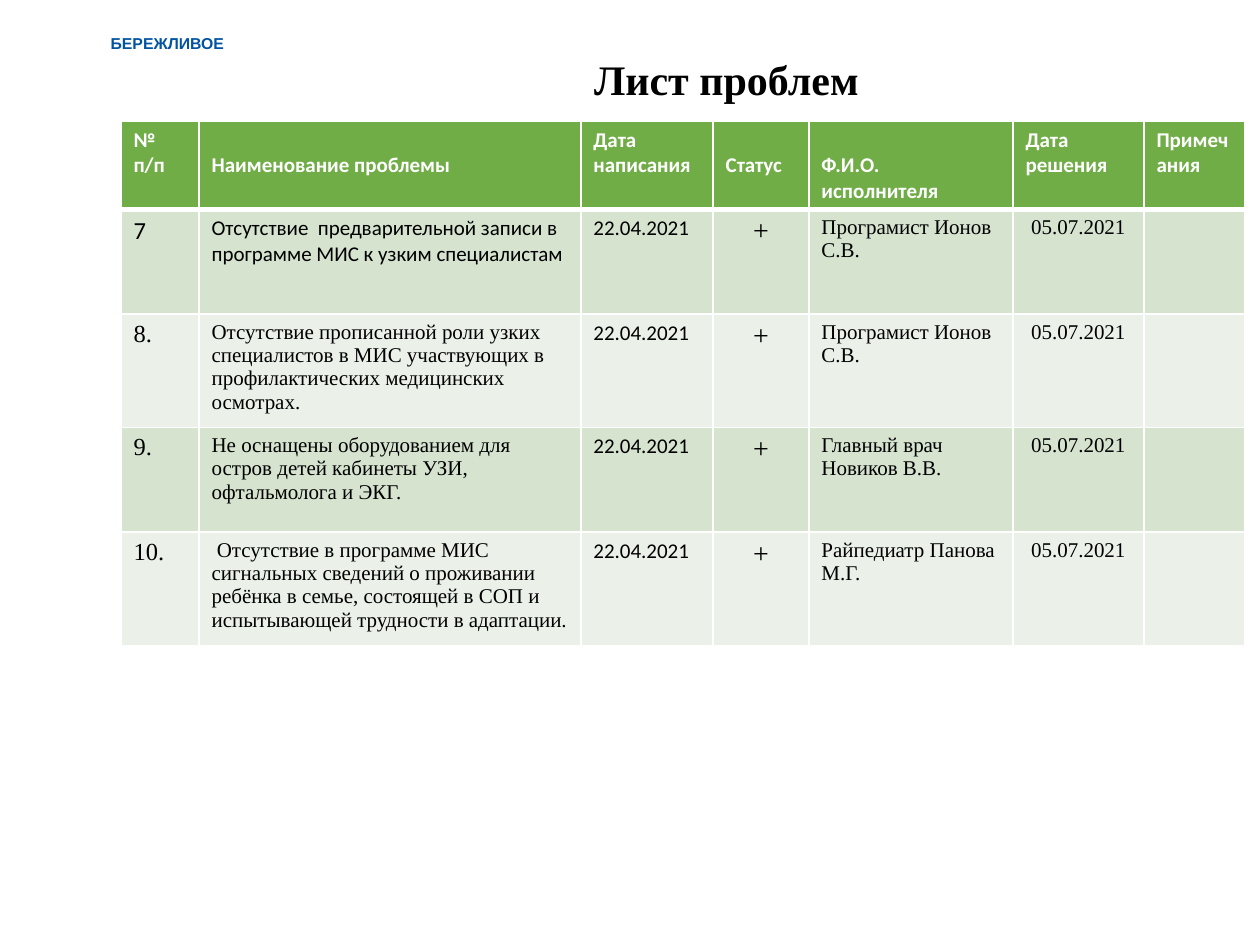
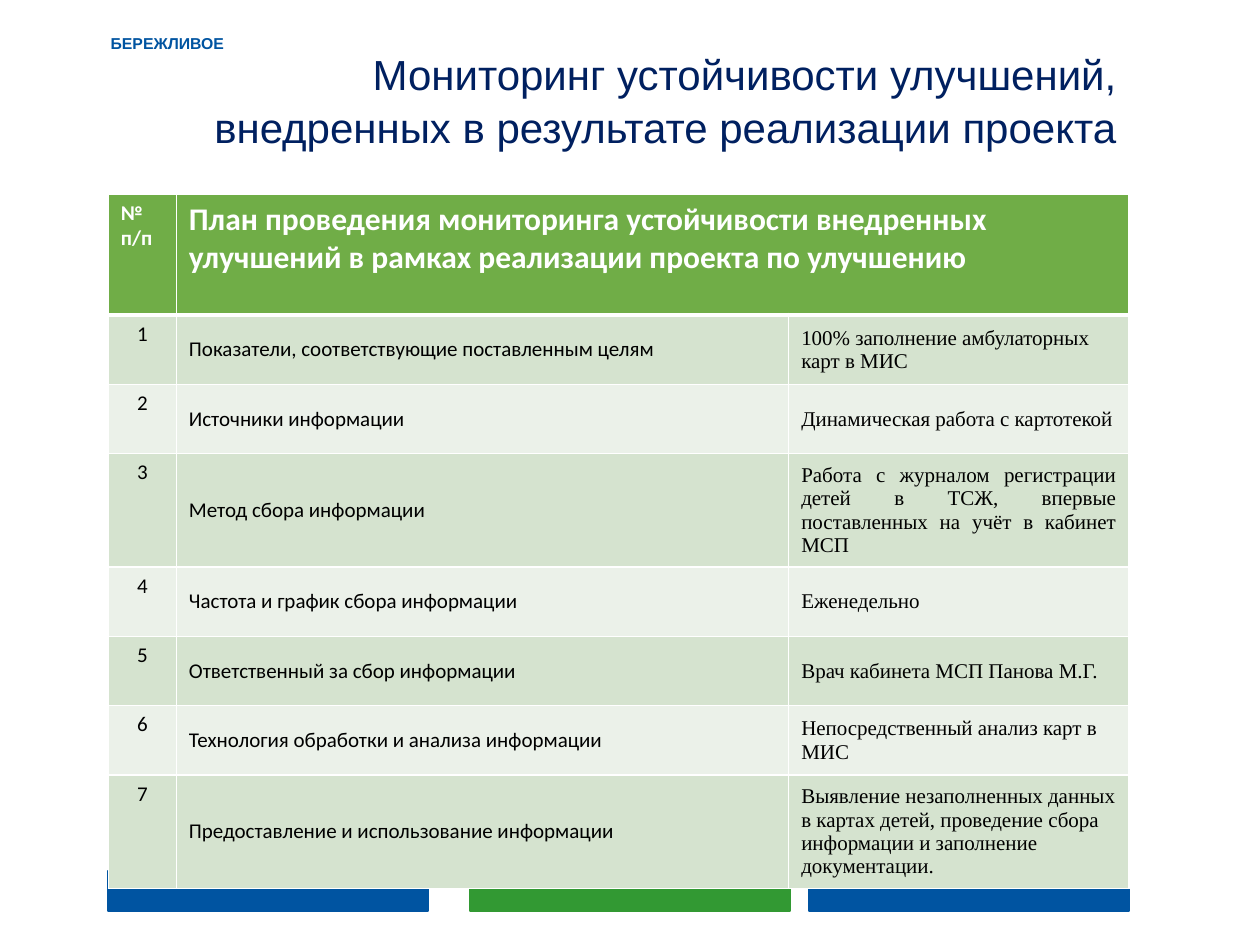
"""Build the problem list and improvement monitoring slides."""
from lxml.etree import SubElement
from pptx import Presentation
from pptx.dml.color import RGBColor
from pptx.enum.shapes import MSO_SHAPE
from pptx.enum.text import MSO_ANCHOR, PP_ALIGN
from pptx.oxml.ns import qn
from pptx.util import Pt

SERIF, SANS, BODY = "Times New Roman", "Arial", "Calibri"
BLUE, GREEN, NAVY, BLACK, WHITE = "0054A1", "329933", "002060", "000000", "FFFFFF"
HEADER, BANDS = "70AD47", ("D5E3CF", "EBF1E9")
LEFT, CENTER, RIGHT, JUSTIFY = PP_ALIGN.LEFT, PP_ALIGN.CENTER, PP_ALIGN.RIGHT, PP_ALIGN.JUSTIFY
TOP, MIDDLE = MSO_ANCHOR.TOP, MSO_ANCHOR.MIDDLE


def rgb(value):
    return RGBColor.from_string(value)


def write(tf, text, font, size, color, align=LEFT, bold=False):
    tf.text = text
    for p in tf.paragraphs:
        p.alignment = align
        for r in p.runs:
            r.font.name, r.font.size, r.font.bold = font, Pt(size), bold
            r.font.color.rgb = rgb(color)


prs = Presentation()
prs.slide_width, prs.slide_height = 9144000, 6858000
U = prs.slide_width / 100

problems = [
    ["№\nп/п", "Наименование проблемы", "Дата\nнаписания", "Статус",
     "Ф.И.О.\nисполнителя", "Дата\nрешения", "Примечания"],
    ["7", "Отсутствие  предварительной записи в программе МИС к узким специалистам",
     "22.04.2021", "+", "Програмист Ионов С.В.", "05.07.2021", ""],
    ["8.", "Отсутствие прописанной роли узких специалистов в МИС участвующих в "
     "профилактических медицинских осмотрах.",
     "22.04.2021", "+", "Програмист Ионов С.В.", "05.07.2021", ""],
    ["9.", "Не оснащены оборудованием для остров детей кабинеты УЗИ, офтальмолога и ЭКГ.",
     "22.04.2021", "+", "Главный врач Новиков В.В.", "05.07.2021", ""],
    ["10.", " Отсутствие в программе МИС сигнальных сведений о проживании ребёнка в семье, "
     "состоящей в СОП и испытывающей трудности в адаптации.",
     "22.04.2021", "+", "Райпедиатр Панова М.Г.", "05.07.2021", ""],
]
monitoring = [
    ["№ п/п", "План проведения мониторинга устойчивости внедренных улучшений "
     "в рамках реализации проекта по улучшению", ""],
    ["1", "Показатели, соответствующие поставленным целям",
     "100% заполнение амбулаторных карт в МИС"],
    ["2", "Источники информации", "Динамическая работа с картотекой"],
    ["3", "Метод сбора информации",
     "Работа с журналом регистрации детей в ТСЖ, впервые поставленных на учёт в кабинет МСП"],
    ["4", "Частота и график сбора информации", "Еженедельно"],
    ["5", "Ответственный за сбор информации", "Врач кабинета МСП Панова М.Г."],
    ["6", "Технология обработки и анализа информации", "Непосредственный анализ карт в МИС"],
    ["7", "Предоставление и использование информации",
     "Выявление незаполненных данных в картах детей, проведение сбора информации "
     "и заполнение документации."],
]
slides = [
    dict(title=("Лист проблем", SERIF, 24, BLACK, CENTER, True), title_box=(25.2, 3.5, 64.9, 15.2),
         bars=[], rows=problems, corner=(9.6, 9.6),
         widths=[6.2, 30.3, 10.5, 7.6, 16.2, 10.4, 8], heights=[6.9, 8.3, 9, 8.3, 9],
         columns=[(SERIF, 14, LEFT, TOP), (SERIF, 12, LEFT, TOP), (BODY, 12, LEFT, TOP),
                  (SERIF, 16, CENTER, TOP), (SERIF, 12, LEFT, TOP), (SERIF, 12, CENTER, TOP),
                  (SERIF, 12, LEFT, TOP)],
         header_sizes=[12] * 7, lowered=(1, 3, 4), plain=[(1, 0), (1, 1)], justified=[]),
    dict(title=("Мониторинг устойчивости улучшений, внедренных в результате реализации проекта",
                SANS, 24, NAVY, RIGHT, False), title_box=(12, 3.1, 77.6, 14.6),
         bars=[(64.2, BLUE), (8.6, BLUE), (37.3, GREEN)], rows=monitoring, corner=(8.6, 15.4),
         widths=[5.4, 48.6, 27], heights=[9.6, 5.5, 5.5, 9, 5.5, 5.5, 5.5, 9],
         columns=[(BODY, 12, CENTER, TOP), (BODY, 12, LEFT, MIDDLE), (SERIF, 12, LEFT, MIDDLE)],
         header_sizes=[12, 18, 18], lowered=(), plain=[], justified=[(3, 2)]),
]

for page in slides:
    s = prs.slides.add_slide(prs.slide_layouts[6])
    tf = s.shapes.add_textbox(*(round(v * U) for v in page["title_box"])).text_frame
    tf.word_wrap = True
    write(tf, *page["title"])
    tf.paragraphs[0].line_spacing = 1.06

    for x, color in page["bars"]:
        sp = s.shapes.add_shape(MSO_SHAPE.RECTANGLE,
                                *(round(v * U) for v in (x, 69.1, 25.4, 3.2)))
        sp.shadow.inherit = False
        sp.fill.solid()
        sp.fill.fore_color.rgb = sp.line.color.rgb = rgb(color)
        sp.line.width = Pt(1)

    tf = s.shapes.add_textbox(*(round(v * U) for v in (7.8, 2.2, 11.1, 2.5))).text_frame
    tf.word_wrap = False
    write(tf, "БЕРЕЖЛИВОЕ", SANS, 9, BLUE, bold=True)

    rows, widths, heights = page["rows"], page["widths"], page["heights"]
    box = (*page["corner"], sum(widths), sum(heights))
    table = s.shapes.add_table(len(rows), len(widths), *(round(v * U) for v in box)).table
    for column, width in zip(table.columns, widths):
        column.width = round(width * U)
    for row, height in zip(table.rows, heights):
        row.height = round(height * U)

    for i, row in enumerate(rows):
        for j, text in enumerate(row):
            cell = table.cell(i, j)
            font, size, align, anchor = page["columns"][j]
            if i == 0:
                font, size, align, anchor = BODY, page["header_sizes"][j], LEFT, TOP
                if j in page["lowered"]:
                    cell.margin_top = round(2.53 * U)
            if (i, j) in page["plain"]:
                font = BODY
            if (i, j) in page["justified"]:
                align = JUSTIFY
            write(cell.text_frame, text, font, size, BLACK if i else WHITE, align, i == 0)
            cell.vertical_anchor = anchor
            tcPr = cell._tc.get_or_add_tcPr()
            for side in "LRTB":
                thick = (i == 0 and side == "B") or (i == 1 and side == "T")
                ln = SubElement(tcPr, qn(f"a:ln{side}"), w=str(Pt(3 if thick else 1)))
                SubElement(SubElement(ln, qn("a:solidFill")), qn("a:srgbClr"), val=WHITE)
            cell.fill.solid()
            cell.fill.fore_color.rgb = rgb(BANDS[(i - 1) % 2] if i else HEADER)
    if rows is monitoring:
        table.cell(0, 1).merge(table.cell(0, 2))

prs.save("out.pptx")
